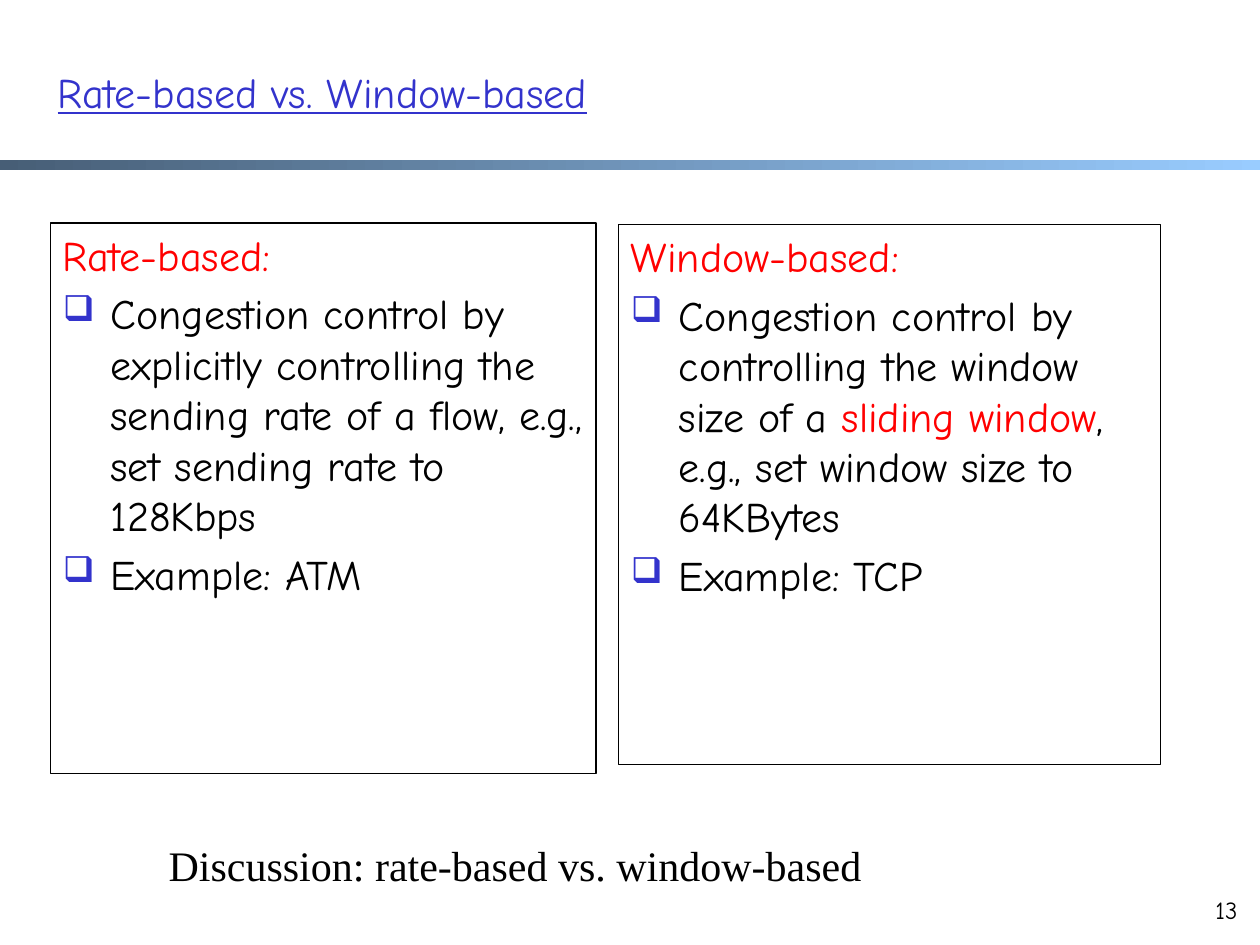
"""Build a slide that compares rate-based and window-based congestion control."""
from lxml.etree import SubElement
from pptx import Presentation
from pptx.dml.color import RGBColor as Rgb
from pptx.enum.shapes import MSO_SHAPE as Shape
from pptx.enum.text import MSO_ANCHOR as Anchor, MSO_AUTO_SIZE as AutoSize, PP_ALIGN as Align
from pptx.oxml.ns import qn
from pptx.util import Inches, Pt

TITLE = "Rate-based vs. Window-based"
DISCUSSION = "Discussion: rate-based vs. window-based"
PAGE_NUMBER = "13"
PANELS = [
    {
        "box": (4.91, 1.78, 4.3, 4.29),
        "heading": "Window-based:",
        "points": [
            [("Congestion control by controlling the window size of a ", "ink"),
             ("sliding window", "accent"),
             (", e.g., set window size to 64KBytes", "ink")],
            [("Example: TCP", "ink")],
        ],
    },
    {
        "box": (0.4, 1.77, 4.33, 4.37),
        "heading": "Rate-based:",
        "points": [
            [("Congestion control by explicitly controlling the sending rate "
              "of a flow, e.g., set sending rate to 128Kbps", "ink")],
            [("Example: ATM", "ink")],
        ],
    },
]
THEME = {
    "ink": "000000", "accent": "FF0000", "title": "3333CC",
    "band": ("475E76", "99CCFF"),
    "font": "Comic Neue", "serif": "Times New Roman",
    "body": 24, "small": 14, "gap": 4.8, "indent": 0.38,
    "bullet": "❑", "bullet_size": "85000",
}


def color(name):
    return Rgb.from_string(THEME[name])


def add_run(paragraph, text, tint="ink", font="font", size="body"):
    run = paragraph.add_run()
    run.text = text
    run.font.name = THEME[font]
    run.font.size = Pt(THEME[size])
    run.font.color.rgb = color(tint)
    return run


def add_label(slide, box, text, wrap=True, **style):
    frame = slide.shapes.add_textbox(*map(Inches, box)).text_frame
    frame.word_wrap = wrap
    return frame, add_run(frame.paragraphs[0], text, **style)


def hang(paragraph, bulleted):
    paragraph.alignment = Align.LEFT
    paragraph.space_before = Pt(THEME["gap"])
    props = paragraph._p.get_or_add_pPr()
    indent = Inches(THEME["indent"])
    props.set("marL", str(indent))
    props.set("indent", str(-indent))
    if bulleted:
        tint = SubElement(props, qn("a:buClr"))
        SubElement(tint, qn("a:srgbClr"), val=THEME["title"])
        SubElement(props, qn("a:buSzPct"), val=THEME["bullet_size"])
        SubElement(props, qn("a:buChar"), char=THEME["bullet"])


def add_rectangle(slide, box):
    rectangle = slide.shapes.add_shape(Shape.RECTANGLE, *map(Inches, box))
    rectangle.shadow.inherit = False
    return rectangle


def add_band(slide):
    band = add_rectangle(slide, (0, 1.27, 10, 0.08))
    band.line.fill.background()
    band.fill.gradient()
    band.fill.gradient_angle = 0
    for stop, tint in zip(band.fill.gradient_stops, THEME["band"]):
        stop.color.rgb = Rgb.from_string(tint)


def add_panel(slide, panel):
    outline = add_rectangle(slide, panel["box"])
    outline.fill.background()
    outline.line.color.rgb = color("ink")
    outline.line.width = Pt(0.75)
    frame = outline.text_frame
    frame.word_wrap = True
    frame.vertical_anchor = Anchor.TOP
    heading = frame.paragraphs[0]
    hang(heading, bulleted=False)
    add_run(heading, panel["heading"], "accent")
    for point in panel["points"]:
        paragraph = frame.add_paragraph()
        hang(paragraph, bulleted=True)
        for text, tint in point:
            add_run(paragraph, text, tint)


def main():
    deck = Presentation()
    deck.slide_width, deck.slide_height = Inches(10), Inches(7.5)
    slide = deck.slides.add_slide(deck.slide_layouts[6])
    add_band(slide)
    for panel in PANELS:
        add_panel(slide, panel)
    discussion, _ = add_label(slide, (1.24, 6.61, 5.7, 0.5), DISCUSSION, wrap=False, font="serif")
    discussion.auto_size = AutoSize.SHAPE_TO_FIT_TEXT
    title, title_run = add_label(slide, (0.36, 0.45, 8.77, 0.55), TITLE, tint="title")
    title.vertical_anchor = Anchor.MIDDLE
    title_run.font.underline = True
    number, _ = add_label(slide, (9.46, 7.05, 0.46, 0.38), PAGE_NUMBER, size="small")
    number.paragraphs[0].alignment = Align.RIGHT
    deck.save("out.pptx")


if __name__ == "__main__":
    main()
